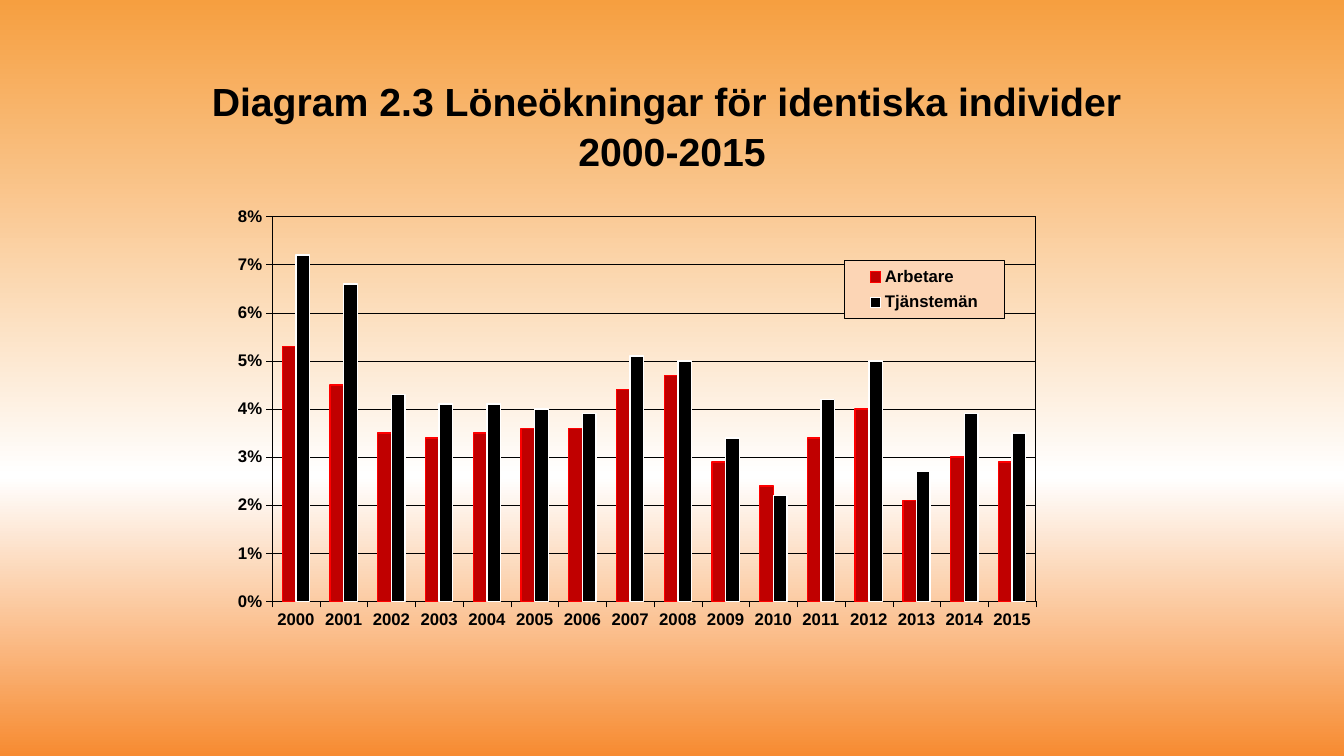
"""Build a slide with a column chart of yearly pay rises for two groups."""
import copy
from dataclasses import dataclass

import lxml.etree
import pptx
import pptx.chart.data
import pptx.dml.color
import pptx.enum.chart
import pptx.enum.text
import pptx.oxml
import pptx.oxml.ns
import pptx.util

Inches = pptx.util.Inches
Pt = pptx.util.Pt
qn = pptx.oxml.ns.qn
FONT = "Arial"
BLACK = "000000"


@dataclass
class Group:
    name: str
    fill: str
    edge: str
    rates: list[float]


@dataclass
class Stop:
    place: int
    tint: str


GROUPS = [
    Group("Arbetare", "C00000", "FF0000",
          [0.053, 0.045, 0.035, 0.034, 0.035, 0.036, 0.036, 0.044,
           0.047, 0.029, 0.024, 0.034, 0.04, 0.021, 0.03, 0.029]),
    Group("Tjänstemän", BLACK, "FFFFFF",
          [0.072, 0.066, 0.043, 0.041, 0.041, 0.04, 0.039, 0.051,
           0.05, 0.034, 0.022, 0.042, 0.05, 0.027, 0.039, 0.035]),
]
STOPS = [Stop(0, "F78B31"), Stop(37, "FFFFFF"), Stop(100, "F69F40")]
TITLE = ["Diagram 2.3 Löneökningar för identiska individer ", "2000-2015"]


def color(code: str) -> pptx.dml.color.RGBColor:
    return pptx.dml.color.RGBColor.from_string(code)


def style(font, size: float) -> None:
    font.name = FONT
    font.size = Pt(size)
    font.bold = True
    font.color.rgb = color(BLACK)


def rule(line, code: str, width: float) -> None:
    line.color.rgb = color(code)
    line.width = Pt(width)


def paint(slide) -> None:
    fill = slide.background.fill
    fill.gradient()
    fill.gradient_angle = 90
    stops = next(slide.element.iter(qn("a:gsLst")))
    stops.insert(1, copy.deepcopy(stops[0]))
    for stop, part in zip(STOPS, fill.gradient_stops):
        part.position = stop.place / 100
        part.color.rgb = color(stop.tint)


def head(slide) -> None:
    box = slide.shapes.add_textbox(
        Inches(1.25), Inches(0.67), Inches(10.83), Inches(1.12))
    frame = box.text_frame
    frame.word_wrap = True
    frame.vertical_anchor = pptx.enum.text.MSO_ANCHOR.MIDDLE
    for place, text in enumerate(TITLE):
        para = frame.add_paragraph() if place else frame.paragraphs[0]
        para.alignment = pptx.enum.text.PP_ALIGN.CENTER
        para.line_spacing = 1.07
        run = para.add_run()
        run.text = text
        style(run.font, 28)


def layout(x: float, y: float, w: float, h: float, inner: bool):
    node = lxml.etree.Element(qn("c:layout"))
    manual = lxml.etree.SubElement(node, qn("c:manualLayout"))
    pairs = [("layoutTarget", "inner")] if inner else []
    pairs += [("xMode", "edge"), ("yMode", "edge"),
              ("x", x), ("y", y), ("w", w), ("h", h)]
    for tag, value in pairs:
        lxml.etree.SubElement(manual, qn("c:" + tag)).set("val", str(value))
    return node


def place(owner, node) -> None:
    for old in owner.findall(qn("c:layout")):
        owner.remove(old)
    owner.insert(1 if owner.tag == qn("c:legend") else 0, node)


def frame(owner, before: str, edge: str, fill: str = "") -> None:
    inside = (f'<a:solidFill><a:srgbClr val="{fill}"/></a:solidFill>'
              if fill else "<a:noFill/>")
    node = pptx.oxml.parse_xml(
        f'<c:spPr {pptx.oxml.ns.nsdecls("c", "a")}>{inside}'
        f'<a:ln w="9525"><a:solidFill><a:srgbClr val="{edge}"/>'
        '</a:solidFill></a:ln></c:spPr>')
    mark = owner.find(qn(before)) if before else None
    if mark is None:
        owner.append(node)
    else:
        mark.addprevious(node)


def draw(slide) -> None:
    data = pptx.chart.data.CategoryChartData(number_format="0%")
    data.categories = [str(year) for year in range(2000, 2016)]
    for group in GROUPS:
        data.add_series(group.name, group.rates)
    chart = slide.shapes.add_chart(
        pptx.enum.chart.XL_CHART_TYPE.COLUMN_CLUSTERED,
        Inches(2.36), Inches(2.06), Inches(7.92), Inches(4.39), data).chart
    chart.has_title = False
    style(chart.font, 12)

    plot = chart.plots[0]
    plot.gap_width = 150
    plot.overlap = 0
    plot.vary_by_categories = False
    for group, bars in zip(GROUPS, plot.series):
        bars.format.fill.solid()
        bars.format.fill.fore_color.rgb = color(group.fill)
        rule(bars.format.line, group.edge, 1)

    rates = chart.value_axis
    for axis in (chart.category_axis, rates):
        axis.major_tick_mark = pptx.enum.chart.XL_TICK_MARK.OUTSIDE
        rule(axis.format.line, BLACK, 0.25)
        style(axis.tick_labels.font, 12)
    rates.minimum_scale = 0
    rates.maximum_scale = 0.08
    rates.major_unit = 0.01
    rates.tick_labels.number_format = "0%"
    rates.tick_labels.number_format_is_linked = False
    rates.has_major_gridlines = True
    rule(rates.major_gridlines.format.line, BLACK, 0.25)

    chart.has_legend = True
    legend = chart.legend
    legend.position = pptx.enum.chart.XL_LEGEND_POSITION.RIGHT
    legend.include_in_layout = False
    style(legend.font, 12)
    root = chart.element
    area = next(root.iter(qn("c:plotArea")))
    key = next(root.iter(qn("c:legend")))
    place(area, layout(0.04, 0.02, 0.96, 0.87, True))
    place(key, layout(0.76, 0.12, 0.2, 0.13, False))
    frame(area, "", BLACK)
    frame(key, "c:txPr", BLACK, "FCD5B5")


def main() -> None:
    deck = pptx.Presentation()
    deck.slide_width = Inches(13.33)
    deck.slide_height = Inches(7.5)
    slide = deck.slides.add_slide(deck.slide_layouts[6])
    paint(slide)
    head(slide)
    draw(slide)
    deck.save("out.pptx")


if __name__ == "__main__":
    main()
